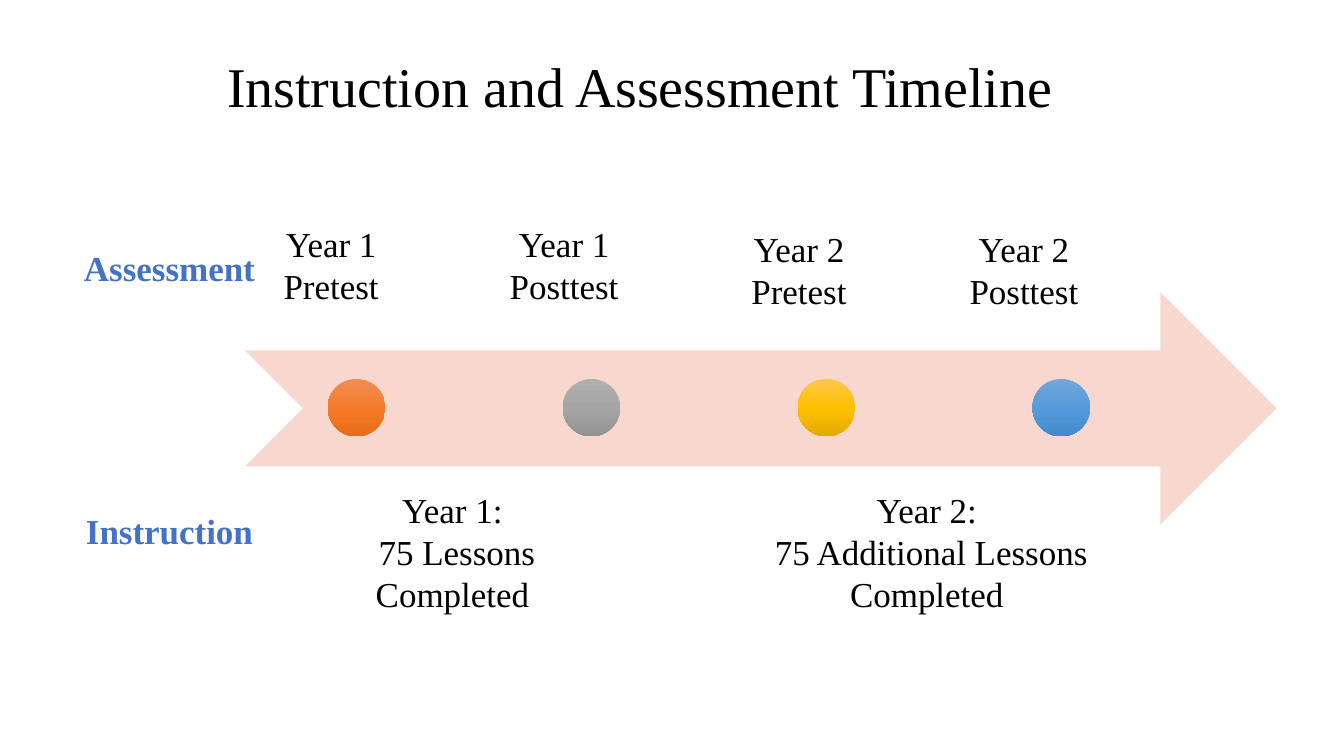
from copy import deepcopy

from pptx import Presentation, util as u
from pptx.dml.color import RGBColor
from pptx.enum import shapes, text
from pptx.oxml.ns import qn

FONT = "Times New Roman"
BLACK = RGBColor(0x00, 0x00, 0x00)
BLUE = RGBColor(0x44, 0x72, 0xC4)
PINK = RGBColor(0xF8, 0xD7, 0xCE)
# Top, middle and bottom colour of each milestone
ORANGE = [RGBColor(0xF1, 0x8C, 0x57), RGBColor(0xF6, 0x7B, 0x28), RGBColor(0xE5, 0x6C, 0x19)]
GREY = [RGBColor(0xAF, 0xAF, 0xAF), RGBColor(0xA5, 0xA5, 0xA5), RGBColor(0x93, 0x93, 0x93)]
GOLD = [RGBColor(0xFF, 0xC6, 0x4B), RGBColor(0xFF, 0xC0, 0x00), RGBColor(0xE3, 0xAB, 0x00)]
SKY = [RGBColor(0x71, 0xA6, 0xDB), RGBColor(0x55, 0x9B, 0xDB), RGBColor(0x44, 0x8A, 0xCA)]

WIDTH, HEIGHT = u.Inches(13.33), u.Inches(7.5)


def area(left, top, width, height):
    """Turn percentages of the slide's size into lengths."""
    return [u.Emu(round(share * side / 100)) for share, side in
            zip((left, top, width, height), (WIDTH, HEIGHT, WIDTH, HEIGHT))]


def write(p, words, size, color=BLACK, bold=False):
    p.alignment = text.PP_ALIGN.CENTER
    r = p.add_run()
    r.text = words
    r.font.name, r.font.size = FONT, u.Pt(size)
    r.font.color.rgb, r.font.bold = color, bold


def add_title(s, words):
    sp = s.shapes.title
    sp.left, sp.top, sp.width, sp.height = area(5.1, 3.47, 85, 16.67)
    sp.text_frame.vertical_anchor = text.MSO_ANCHOR.MIDDLE
    p = sp.text_frame.paragraphs[0]
    p.line_spacing = 0.9
    write(p, words, 40)


def add_label(s, lines, box, **style):
    tf = s.shapes.add_textbox(*area(*box)).text_frame
    tf.word_wrap = True
    tf.auto_size = text.MSO_AUTO_SIZE.SHAPE_TO_FIT_TEXT
    for i, line in enumerate(lines):
        p = tf.add_paragraph() if i else tf.paragraphs[0]
        write(p, line, 25, **style)


def add_plain_shape(group, kind, box):
    sp = group.shapes.add_shape(kind, *area(*box))
    sp.shadow.inherit = False
    sp.line.fill.background()
    return sp


def add_arrow(group):
    sp = add_plain_shape(group, shapes.MSO_SHAPE.NOTCHED_RIGHT_ARROW,
                         (18.23, 38.67, 76.74, 30.67))
    sp.fill.solid()
    sp.fill.fore_color.rgb = PINK


def add_milestone(group, left, colors):
    sp = add_plain_shape(group, shapes.MSO_SHAPE.OVAL, (left, 50.13, 4.28, 7.6))
    sp.fill.gradient()
    sp.fill.gradient_angle = 270
    # The preset gradient has two stops; add one in the middle
    stops = sp.element.spPr.find(".//" + qn("a:gsLst"))
    stops.insert(1, deepcopy(stops[0]))
    for i, (stop, color) in enumerate(zip(sp.fill.gradient_stops, colors)):
        stop.position = i / 2
        stop.color.rgb = color


def main():
    prs = Presentation()
    prs.slide_width, prs.slide_height = WIDTH, HEIGHT
    s = prs.slides.add_slide(prs.slide_layouts[5])
    add_title(s, "Instruction and Assessment Timeline")

    # Arrow with evenly spaced milestones
    timeline = s.shapes.add_group_shape()
    add_arrow(timeline)
    for i, colors in enumerate([ORANGE, GREY, GOLD, SKY]):
        add_milestone(timeline, 24.38 + 17.48 * i, colors)

    # Assessments above the arrow
    for words, left, top in [("Year 1 Pretest", 19.05, 28.8),
                             ("Year 1 Posttest", 36.38, 28.8),
                             ("Year 2 Pretest", 53.86, 29.47),
                             ("Year 2 Posttest", 70.59, 29.47)]:
        add_label(s, [words], (left, top, 11.18, 12.53))

    # Instruction below the arrow
    for lines, left, width in [(["Year 1: ", "75 Lessons Completed "], 22.43, 23.11),
                               (["Year 2: ", "75 Additional Lessons Completed "], 56.19, 26.18)]:
        add_label(s, lines, (left, 64, width, 18.13))

    # Row headings
    for words, top in [("Assessment", 32), ("Instruction", 66.8)]:
        add_label(s, [words], (1.05, top, 23.11, 6.93), color=BLUE, bold=True)

    prs.save("out.pptx")


if __name__ == "__main__":
    main()
